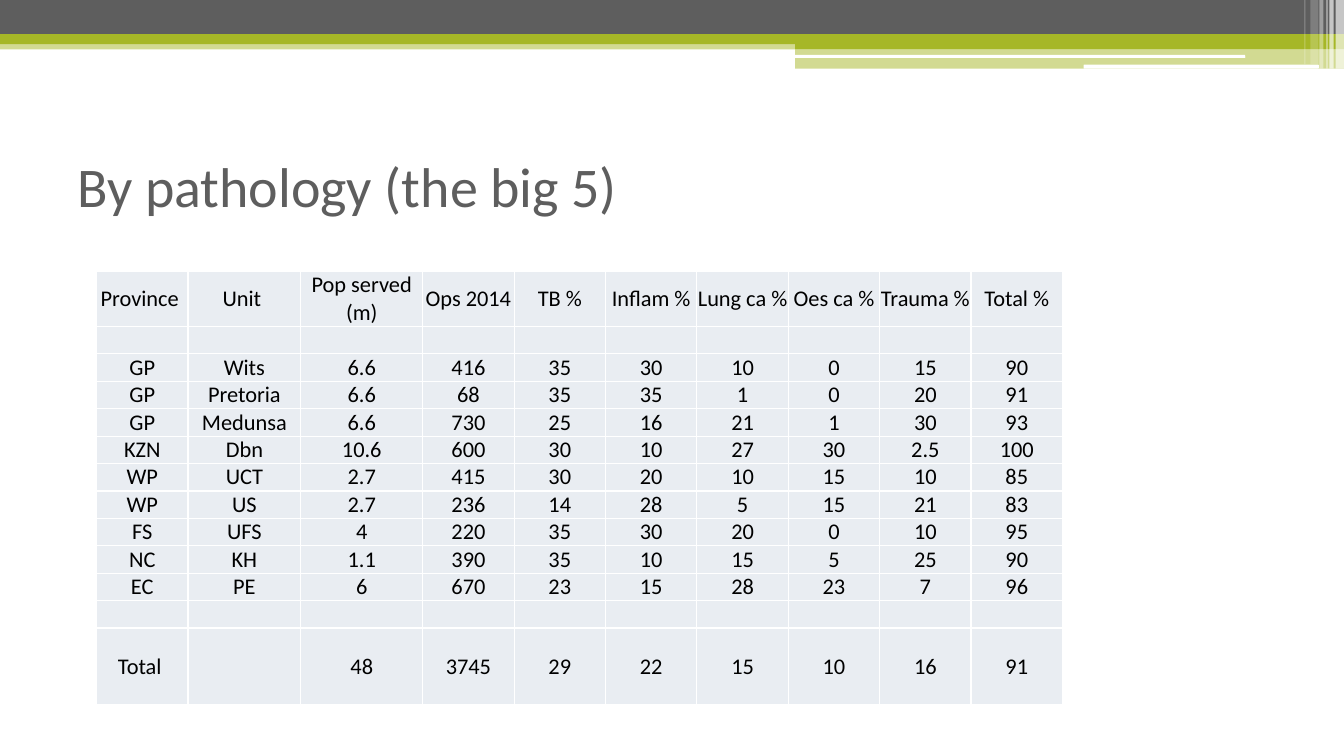
from dataclasses import dataclass

from lxml import etree
from pptx import Presentation
from pptx import util as u
from pptx.dml import color
from pptx.enum import shapes, text
from pptx.oxml import ns


@dataclass(frozen=True)
class Theme:
    font: str = "Calibri"
    title_size: float = 40
    table_size: float = 16
    grey: str = "5E5E5E"
    green: str = "A6B727"
    white: str = "FFFFFF"
    black: str = "000000"
    cell: str = "E9EDF2"


class SlideBuilder:
    def __init__(self, slide, theme):
        self.slide = slide
        self.theme = theme

    def style(self, paragraph, size, ink, align):
        paragraph.alignment = align
        for run in paragraph.runs:
            run.font.name = self.theme.font
            run.font.size = u.Pt(size)
            run.font.color.rgb = color.RGBColor.from_string(ink)

    def title(self, wording, left, top, width, height):
        heading = self.slide.shapes.title
        heading.left, heading.top = u.Pt(left), u.Pt(top)
        heading.width, heading.height = u.Pt(width), u.Pt(height)
        frame = heading.text_frame
        frame.text = wording
        frame.word_wrap = True
        frame.vertical_anchor = text.MSO_ANCHOR.MIDDLE
        self.style(frame.paragraphs[0], self.theme.title_size, self.theme.grey, text.PP_ALIGN.LEFT)

    def bar(self, left, top, width, height, ink, opacity=100, rounded=False):
        preset = shapes.MSO_SHAPE.ROUNDED_RECTANGLE if rounded else shapes.MSO_SHAPE.RECTANGLE
        band = self.slide.shapes.add_shape(preset, u.Pt(left), u.Pt(top), u.Pt(width), u.Pt(height))
        band.shadow.inherit = False
        band.line.fill.background()
        band.fill.solid()
        band.fill.fore_color.rgb = color.RGBColor.from_string(ink)
        if opacity < 100:
            tint = band.fill._xPr.find(".//" + ns.qn("a:srgbClr"))
            etree.SubElement(tint, ns.qn("a:alpha"), val=str(opacity * 1000))

    def cell(self, cell, wording):
        cell.margin_left = cell.margin_right = cell.margin_top = cell.margin_bottom = 0
        cell.vertical_anchor = text.MSO_ANCHOR.MIDDLE
        cell.text = wording
        paragraph = cell.text_frame.paragraphs[0]
        self.style(paragraph, self.theme.table_size, self.theme.black, text.PP_ALIGN.CENTER)
        if not wording:
            etree.SubElement(paragraph._p, ns.qn("a:endParaRPr"), sz=str(self.theme.table_size * 100))
        properties = cell._tc.get_or_add_tcPr()
        for side in ("a:lnL", "a:lnR", "a:lnT", "a:lnB"):
            border = etree.SubElement(properties, ns.qn(side), w=str(u.Pt(1)))
            paint = etree.SubElement(border, ns.qn("a:solidFill"))
            etree.SubElement(paint, ns.qn("a:srgbClr"), val=self.theme.white)
        cell.fill.solid()
        cell.fill.fore_color.rgb = color.RGBColor.from_string(self.theme.cell)

    def table(self, records, left, top, widths, heights):
        frame = self.slide.shapes.add_table(
            len(records), len(widths), u.Pt(left), u.Pt(top), u.Pt(sum(widths)), u.Pt(sum(heights)))
        grid = frame.table
        grid.first_row = grid.horz_banding = False
        for column, width in zip(grid.columns, widths):
            column.width = u.Pt(width)
        for row, height, record in zip(grid.rows, heights, records):
            row.height = u.Pt(height)
            for cell, wording in zip(row.cells, record):
                self.cell(cell, wording)


HEADINGS = ["Province ", "Unit ", "Pop served (m)", "Ops 2014", "TB %",
            "Inflam %", "Lung ca %", "Oes ca %", "Trauma %", "Total %"]
UNITS = """GP Wits 6.6 416 35 30 10 0 15 90
GP Pretoria 6.6 68 35 35 1 0 20 91
GP Medunsa 6.6 730 25 16 21 1 30 93
KZN Dbn 10.6 600 30 10 27 30 2.5 100
WP UCT 2.7 415 30 20 10 15 10 85
WP US 2.7 236 14 28 5 15 21 83
FS UFS 4 220 35 30 20 0 10 95
NC KH 1.1 390 35 10 15 5 25 90
EC PE 6 670 23 15 28 23 7 96"""
TOTALS = ["Total ", "", "48", "3745", "29", "22", "15", "10", "16", "91"]


def main():
    deck = Presentation()
    deck.slide_width, deck.slide_height = u.Pt(960), u.Pt(540)
    theme = Theme()
    page = SlideBuilder(deck.slides.add_slide(deck.slide_layouts[5]), theme)

    page.bar(0, 28.8, 960, 6.5, theme.green, 50)
    page.bar(0, 0, 960, 24.4, theme.grey)
    page.bar(0, 24.4, 960, 7.2, theme.green)
    page.bar(568, 28.2, 392, 7.2, theme.green)
    page.bar(568, 35.4, 392, 13.6, theme.green, 50)
    page.bar(567.5, 39.2, 322, 2.2, theme.white, rounded=True)
    page.bar(774, 46.2, 168, 2.8, theme.white, rounded=True)
    stripes = [(954, 6, 49, 65), (949.6, 3, 49, 65), (947.5, 0.8, 49, 60),
               (942.5, 2.9, 49, 40), (936, 5.8, 46, 20), (931.7, 0.8, 46, 30)]
    for left, width, height, opacity in stripes:
        page.bar(left, 0, width, height, theme.white, opacity)

    page.title("By pathology (the big 5)", 48, 90, 864, 84)

    blank = [""] * len(HEADINGS)
    units = [line.split() for line in UNITS.splitlines()]
    records = [HEADINGS, blank, *units, blank, TOTALS]
    widths = [65.3, 80.6, 87.1] + [65.3] * 7
    heights = [36.7] + [18.2] * (len(records) - 2) + [54.7]
    page.table(records, 69, 194, widths, heights)

    deck.save("out.pptx")


if __name__ == "__main__":
    main()
